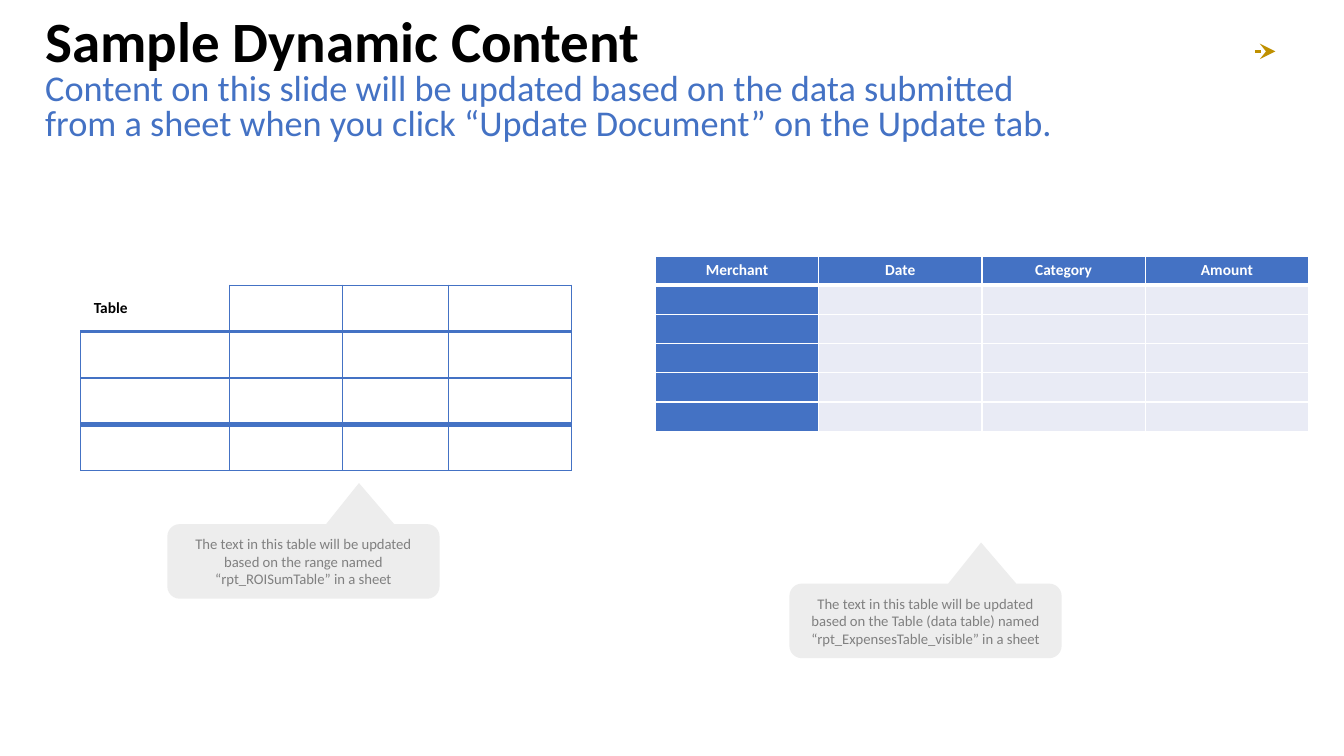
"""Build a slide with two updatable tables and their explanatory callouts."""
from pptx import Presentation
from pptx.dml.color import RGBColor
from pptx.enum import shapes, text
from pptx.oxml import xmlchemy
from pptx.util import Inches, Pt

BLACK = RGBColor(0x00, 0x00, 0x00)
WHITE = RGBColor(0xFF, 0xFF, 0xFF)
BLUE = RGBColor(0x44, 0x72, 0xC4)
PALE_BLUE = RGBColor(0xE9, 0xEB, 0xF5)
GOLD = RGBColor(0xBF, 0x90, 0x00)
LIGHT_GRAY = RGBColor(0xED, 0xED, 0xED)
GRAY = RGBColor(0x80, 0x80, 0x80)
FONT = "Calibri"
CELL_SIZE = 11


def make_element(tag, **attributes):
    """Return a new XML element with the given attributes."""
    element = xmlchemy.OxmlElement(tag)
    for name, value in attributes.items():
        element.set(name, str(value))
    return element


def add_run(paragraph, content, size, color, bold=False):
    """Append one formatted run to a paragraph."""
    run = paragraph.add_run()
    run.text = content
    run.font.name = FONT
    run.font.size = Pt(size)
    run.font.bold = bold
    run.font.color.rgb = color


def set_borders(cell, color, widths):
    """Draw the left, right, top and bottom edges; a zero width hides one."""
    properties = cell._tc.get_or_add_tcPr()
    for index, (side, width) in enumerate(zip("LRTB", widths)):
        line = make_element(f"a:ln{side}", w=Pt(width))
        if width:
            fill = make_element("a:solidFill")
            fill.append(make_element("a:srgbClr", val=color))
        else:
            fill = make_element("a:noFill")
        line.append(fill)
        properties.insert(index, line)


def add_grid(slide, left, top, columns, row_height, edges, color):
    """Add an empty ruled table whose horizontal edges have the given widths."""
    rows = len(edges) - 1
    frame = slide.shapes.add_table(rows, len(columns), Inches(left), Inches(top),
                                   Inches(sum(columns)), Inches(row_height * rows))
    table = frame.table
    table.first_row = table.horz_banding = False
    for column, width in zip(table.columns, columns):
        column.width = Inches(width)
    for row_index, row in enumerate(table.rows):
        row.height = Inches(row_height)
        for column_index, cell in enumerate(row.cells):
            cell.fill.background()
            cell.margin_top = cell.margin_bottom = Inches(0.03)
            corner = color == BLUE and row_index == column_index == 0
            outer = 0 if corner else 1
            top_width = 0 if corner else edges[row_index]
            set_borders(cell, color, (outer, 1, top_width, edges[row_index + 1]))
            paragraph = cell.text_frame.paragraphs[0]
            paragraph._p.append(make_element("a:endParaRPr", sz=CELL_SIZE * 100))
    return table


def add_heading(slide, left, top, width, height):
    """Add the title and its subtitle in one box."""
    box = slide.shapes.add_textbox(Inches(left), Inches(top), Inches(width), Inches(height))
    frame = box.text_frame
    frame.word_wrap = True
    frame.margin_right = Inches(0.2)
    frame.vertical_anchor = text.MSO_ANCHOR.MIDDLE
    title = frame.paragraphs[0]
    subtitle = frame.add_paragraph()
    title.line_spacing = subtitle.line_spacing = 0.8
    add_run(title, "Sample Dynamic Content", 40.7, BLACK, True)
    add_run(subtitle, "Content on this slide will be updated based on the data submitted "
            "from a sheet when you click “Update Document” on the Update tab.", 25.9, BLUE)


def add_arrow(slide, left, top, length):
    """Add the small gold arrow in the corner."""
    arrow = slide.shapes.add_connector(shapes.MSO_CONNECTOR.STRAIGHT, Inches(left),
                                       Inches(top), Inches(left + length), Inches(top))
    arrow.line.color.rgb = GOLD
    arrow.line.width = Pt(2.25)
    arrow.line._get_or_add_ln().append(
        make_element("a:tailEnd", type="stealth", w="lg", len="lg"))
    arrow._element.spPr.append(make_element("a:effectLst"))


def add_summary_table(slide, left, top):
    """Add the outlined summary table."""
    table = add_grid(slide, left, top, (1.48, 1.12, 1.05, 1.22), 0.46, (1, 2, 2, 4, 1), BLUE)
    cell = table.cell(0, 0)
    cell.margin_left = Inches(0.13)
    cell.vertical_anchor = text.MSO_ANCHOR.MIDDLE
    add_run(cell.text_frame.paragraphs[0], "Table", CELL_SIZE, BLACK, True)


def add_expense_table(slide, left, top):
    """Add the filled expense table with its header row."""
    headers = ("Merchant", "Date", "Category", "Amount")
    table = add_grid(slide, left, top, (1.62,) * len(headers), 0.29, (1, 3, 1, 1, 1, 1, 1), WHITE)
    for row_index, row in enumerate(table.rows):
        for column_index, cell in enumerate(row.cells):
            cell.fill.solid()
            is_header = row_index == 0 or column_index == 0
            cell.fill.fore_color.rgb = BLUE if is_header else PALE_BLUE
    for cell, header in zip(table.rows[0].cells, headers):
        paragraph = cell.text_frame.paragraphs[0]
        paragraph.alignment = text.PP_ALIGN.CENTER
        paragraph.line_spacing = 1.07
        add_run(paragraph, header, CELL_SIZE, WHITE, True)


def add_callout(slide, left, top, content):
    """Add a gray callout that points up at its table."""
    callout = slide.shapes.add_shape(shapes.MSO_SHAPE.ROUNDED_RECTANGULAR_CALLOUT,
                                     Inches(left), Inches(top), Inches(2.7), Inches(0.74))
    for index, value in enumerate((0.204, -1.051, 0.167)):
        callout.adjustments[index] = value
    callout.shadow.inherit = False
    callout.fill.solid()
    callout.fill.fore_color.rgb = LIGHT_GRAY
    callout.line.fill.background()
    frame = callout.text_frame
    frame.word_wrap = True
    frame.vertical_anchor = text.MSO_ANCHOR.MIDDLE
    paragraph = frame.paragraphs[0]
    paragraph.alignment = text.PP_ALIGN.CENTER
    add_run(paragraph, f"The text in this table will be updated based on the {content} in a sheet",
            10.5, GRAY)


def main():
    """Build and save the presentation."""
    presentation = Presentation()
    presentation.slide_width = Inches(13.33)
    presentation.slide_height = Inches(7.5)
    slide = presentation.slides.add_slide(presentation.slide_layouts[6])
    add_arrow(slide, 12.45, 0.51, 0.2)
    add_heading(slide, 0.35, 0.08, 10.53, 1.45)
    add_summary_table(slide, 0.8, 2.83)
    add_callout(slide, 1.66, 5.2, "range named “rpt_ROISumTable”")
    add_callout(slide, 7.83, 5.79, "Table (data table) named “rpt_ExpensesTable_visible”")
    add_expense_table(slide, 6.5, 2.54)
    presentation.save("out.pptx")


if __name__ == "__main__":
    main()
